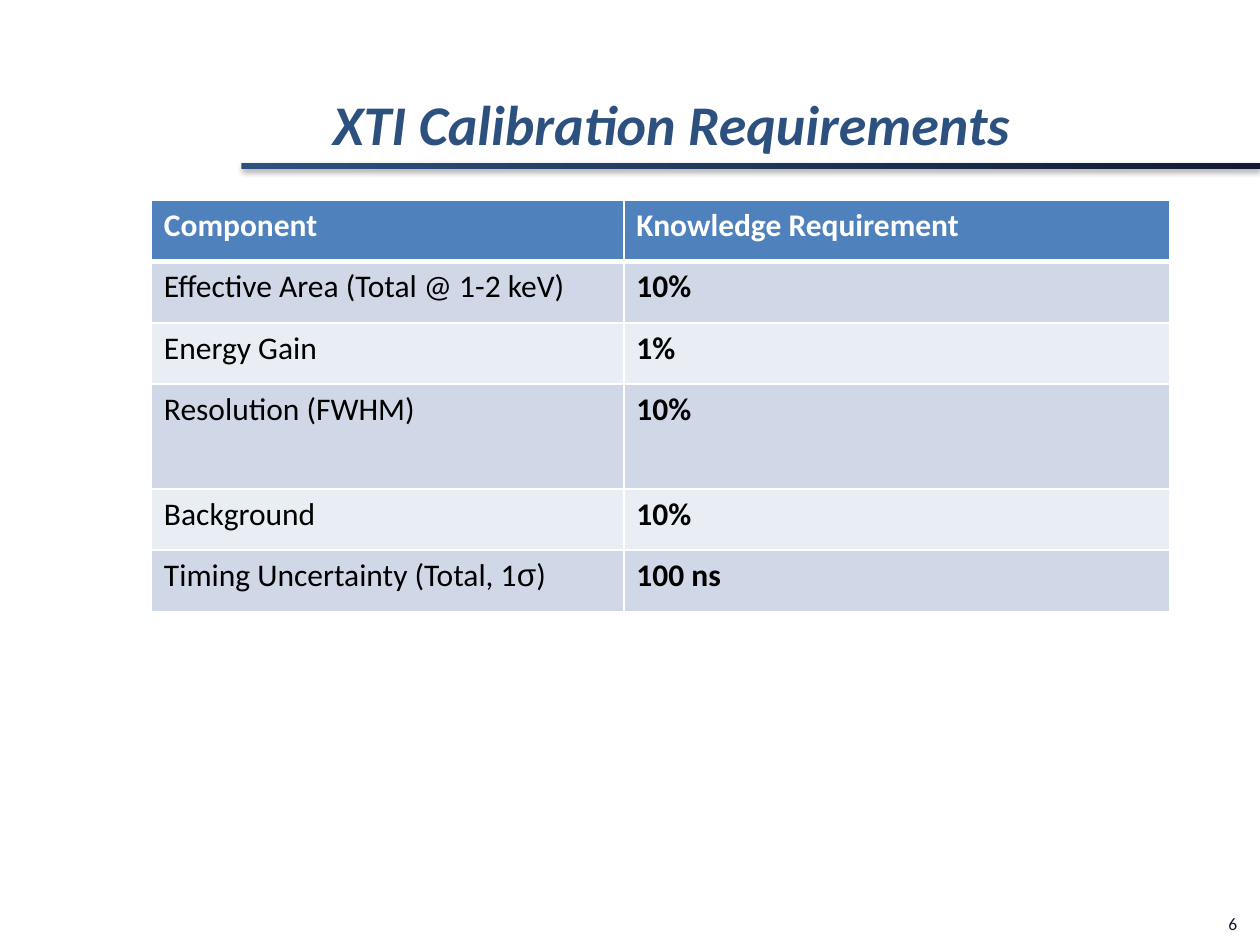
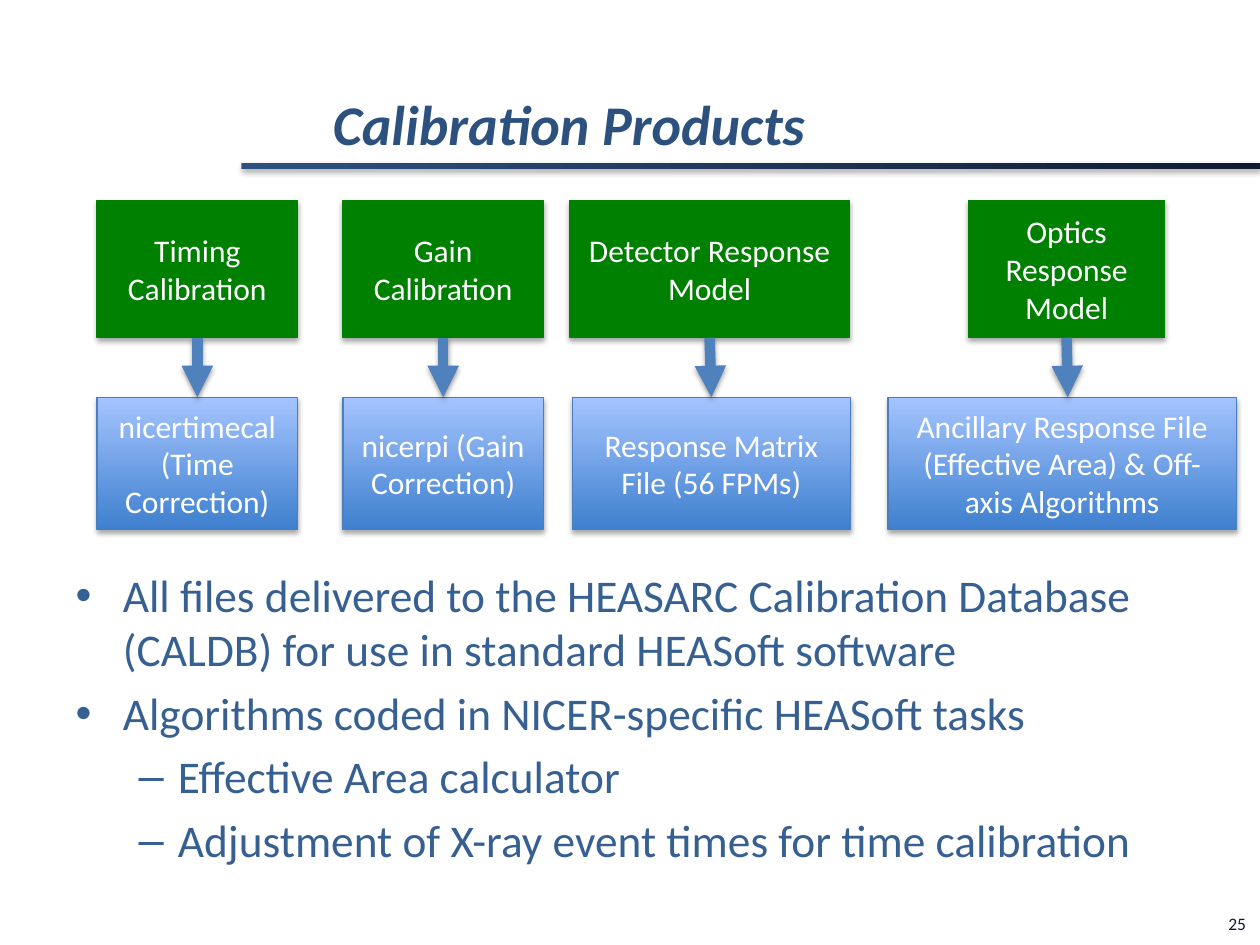
from lxml import etree
from pptx import Presentation
from pptx.dml.color import RGBColor
from pptx.enum.shapes import MSO_CONNECTOR, MSO_SHAPE
from pptx.enum.text import MSO_ANCHOR, MSO_AUTO_SIZE, PP_ALIGN
from pptx.oxml.ns import qn
from pptx.util import Pt

RECTANGLE = MSO_SHAPE.RECTANGLE
STRAIGHT = MSO_CONNECTOR.STRAIGHT
LEFT, CENTER = PP_ALIGN.LEFT, PP_ALIGN.CENTER
TOP, MIDDLE, BOTTOM = MSO_ANCHOR.TOP, MSO_ANCHOR.MIDDLE, MSO_ANCHOR.BOTTOM
NO_FIT, GROW = MSO_AUTO_SIZE.NONE, MSO_AUTO_SIZE.SHAPE_TO_FIT_TEXT

WHITE = RGBColor(0xFF, 0xFF, 0xFF)
BLACK = RGBColor(0x00, 0x00, 0x00)
NAVY = RGBColor(0x12, 0x1A, 0x33)
TITLE_BLUE = RGBColor(0x2D, 0x51, 0x7F)
BODY_BLUE = RGBColor(0x37, 0x60, 0x92)
ACCENT = RGBColor(0x4F, 0x81, 0xBD)
PRODUCT_LINE = RGBColor(0x4B, 0x7E, 0xBC)
PRODUCT_DARK = RGBColor(0x3F, 0x80, 0xCE)
PRODUCT_LIGHT = RGBColor(0xA4, 0xC4, 0xFF)
GREEN = RGBColor(0x00, 0x80, 0x00)
ROW_DARK = RGBColor(0xD0, 0xD8, 0xE8)
ROW_LIGHT = RGBColor(0xE9, 0xED, 0xF4)

TITLE_ONLY, TITLE_AND_CONTENT = 5, 1
BOTTOM_SITE, TOP_SITE = 2, 0
EMU_PER_POINT = 12700

REQUIREMENTS = [
    ("Component", "Knowledge Requirement"),
    ("Effective Area (Total @ 1-2 keV)", "10%"),
    ("Energy Gain", "1%"),
    ("Resolution (FWHM)", "10%"),
    ("Background", "10%"),
    ("Timing Uncertainty (Total, 1σ)", "100 ns"),
]
ROW_HEIGHTS = [35, 35, 35, 60, 35, 35]
COLUMN_WIDTHS = [270, 312]

INPUT_TOP, INPUT_HEIGHT = 114.5, 78.5
PRODUCT_TOP, PRODUCT_HEIGHT = 227, 75.5
FLOWS = [
    ("Timing Calibration", 55.5, 114.5, "nicertimecal (Time Correction)", 55.5, 114.5),
    ("Gain Calibration", 196, 114.5, "nicerpi (Gain Correction)", 196, 114.5),
    ("Detector Response Model", 325.5, 160, "Response Matrix File (56 FPMs)", 327, 159),
    ("Optics Response Model", 553.5, 112,
     "Ancillary Response File (Effective Area) & Off-axis Algorithms", 507.5, 199),
]
DELIVERY_POINTS = [
    (0, "All files delivered to the HEASARC Calibration Database (CALDB) "
        "for use in standard HEASoft software"),
    (0, "Algorithms coded in NICER-specific HEASoft tasks"),
    (1, "Effective Area calculator"),
    (1, "Adjustment of X-ray event times for time calibration"),
]


def add_span(para, text, size=18, color=WHITE, font="Calibri", bold=False, italic=False):
    span = para.add_run()
    span.text = text
    span.font.name = font
    span.font.size = Pt(size)
    span.font.bold = bold
    span.font.italic = italic
    span.font.color.rgb = color


def place(box, left, top, width, height):
    box.left, box.top, box.width, box.height = map(Pt, (left, top, width, height))


def cast_shadow(effects, opacity=35, distance=1.8):
    shadow = etree.SubElement(
        effects, qn("a:outerShdw"), blurRad=str(int(3.1 * EMU_PER_POINT)),
        dist=str(int(distance * EMU_PER_POINT)), dir="5400000", rotWithShape="0")
    color = etree.SubElement(shadow, qn("a:srgbClr"), val="000000")
    etree.SubElement(color, qn("a:alpha"), val=str(opacity * 1000))


def fill_gradient(fill, start, end, angle):
    fill.gradient()
    fill.gradient_angle = angle
    for stop, color in zip(fill.gradient_stops, (start, end)):
        stop.color.rgb = color


def add_block(page, left, top, width, height, color=None, gradient=None, line=None, text=""):
    box = page.shapes.add_shape(RECTANGLE, Pt(left), Pt(top), Pt(width), Pt(height))
    if gradient:
        fill_gradient(box.fill, *gradient)
    else:
        box.fill.solid()
        box.fill.fore_color.rgb = color
    if line:
        box.line.color.rgb = line
        box.line.width = Pt(0.75)
    else:
        box.line.fill.background()
    box.shadow.inherit = False
    cast_shadow(box._element.spPr.find(qn("a:effectLst")))
    if text:
        frame = box.text_frame
        frame.word_wrap = True
        frame.vertical_anchor = MIDDLE
        frame.paragraphs[0].alignment = CENTER
        add_span(frame.paragraphs[0], text)
    return box


def add_arrow(page, source, target):
    center = source.left + source.width // 2
    arrow = page.shapes.add_connector(
        STRAIGHT, center, source.top + source.height, center + Pt(0.7), target.top)
    arrow.begin_connect(source, BOTTOM_SITE)
    if abs(center - target.left - target.width // 2) < Pt(2):
        arrow.end_connect(target, TOP_SITE)
    arrow.line.color.rgb = ACCENT
    arrow.line.width = Pt(6)
    etree.SubElement(arrow.line._get_or_add_ln(), qn("a:tailEnd"), type="triangle")
    effects = etree.SubElement(arrow._element.spPr, qn("a:effectLst"))
    cast_shadow(effects, opacity=38, distance=1.6)


def set_borders(cell, **widths):
    properties = cell._tc.get_or_add_tcPr()
    for index, side in enumerate("LRTB"):
        border = etree.Element(
            qn("a:ln" + side), w=str(widths.get(side, 1) * EMU_PER_POINT))
        fill = etree.SubElement(border, qn("a:solidFill"))
        etree.SubElement(fill, qn("a:srgbClr"), val=str(WHITE))
        properties.insert(index, border)


def add_requirements(page):
    table = page.shapes.add_table(
        len(REQUIREMENTS), len(COLUMN_WIDTHS), Pt(86.5), Pt(114.5),
        Pt(sum(COLUMN_WIDTHS)), Pt(sum(ROW_HEIGHTS))).table
    for column, width in zip(table.columns, COLUMN_WIDTHS):
        column.width = Pt(width)
    for row, height in zip(table.rows, ROW_HEIGHTS):
        row.height = Pt(height)
    for row_index, texts in enumerate(REQUIREMENTS):
        header = row_index == 0
        band = ACCENT if header else ROW_DARK if row_index % 2 else ROW_LIGHT
        for column_index, text in enumerate(texts):
            cell = table.cell(row_index, column_index)
            cell.fill.solid()
            cell.fill.fore_color.rgb = band
            cell.vertical_anchor = TOP
            set_borders(cell, T=3 if row_index == 1 else 1, B=3 if header else 1)
            for piece in filter(None, text.partition("σ")):
                add_span(cell.text_frame.paragraphs[0], piece,
                         color=WHITE if header else BLACK,
                         font="Arial" if piece == "σ" else "Calibri",
                         bold=header or column_index == 1)


def add_flows(page):
    for source_text, source_left, source_width, text, left, width in FLOWS:
        source = add_block(page, source_left, INPUT_TOP, source_width, INPUT_HEIGHT,
                           color=GREEN, line=GREEN, text=source_text)
        product = add_block(page, left, PRODUCT_TOP, width, PRODUCT_HEIGHT,
                            gradient=(PRODUCT_DARK, PRODUCT_LIGHT, 90),
                            line=PRODUCT_LINE, text=text)
        add_arrow(page, source, product)


def add_list(page, points):
    body = page.placeholders[1]
    place(body, 36, 320.5, 648, 191)
    frame = body.text_frame
    frame.auto_size = NO_FIT
    for index, (level, text) in enumerate(points):
        para = frame.add_paragraph() if index else frame.paragraphs[0]
        para.level = level
        if index == 0:
            para.space_before = Pt(0)
        add_span(para, text, size=25.9, color=BODY_BLUE)


def add_page(deck, layout, title, number):
    page = deck.slides.add_slide(deck.slide_layouts[layout])
    add_block(page, 138, 93, 582, 3.6, gradient=(TITLE_BLUE, NAVY, 0))
    heading = page.shapes.title
    place(heading, 183, 42.5, 501, 50.5)
    frame = heading.text_frame
    frame.auto_size = NO_FIT
    frame.vertical_anchor = BOTTOM
    frame.paragraphs[0].alignment = LEFT
    add_span(frame.paragraphs[0], title, size=32, color=TITLE_BLUE, bold=True, italic=True)
    footer = page.shapes.add_textbox(Pt(694.8), Pt(518.4), Pt(26.6), Pt(19.4))
    footer.text_frame.word_wrap = False
    footer.text_frame.auto_size = GROW
    add_span(footer.text_frame.paragraphs[0], number, size=10, color=NAVY)
    return page


def main():
    deck = Presentation()
    deck.slide_width, deck.slide_height = Pt(720), Pt(540)
    add_requirements(add_page(deck, TITLE_ONLY, "XTI Calibration Requirements", "6"))
    products = add_page(deck, TITLE_AND_CONTENT, "Calibration Products", "25")
    add_flows(products)
    add_list(products, DELIVERY_POINTS)
    deck.save("out.pptx")


if __name__ == "__main__":
    main()
